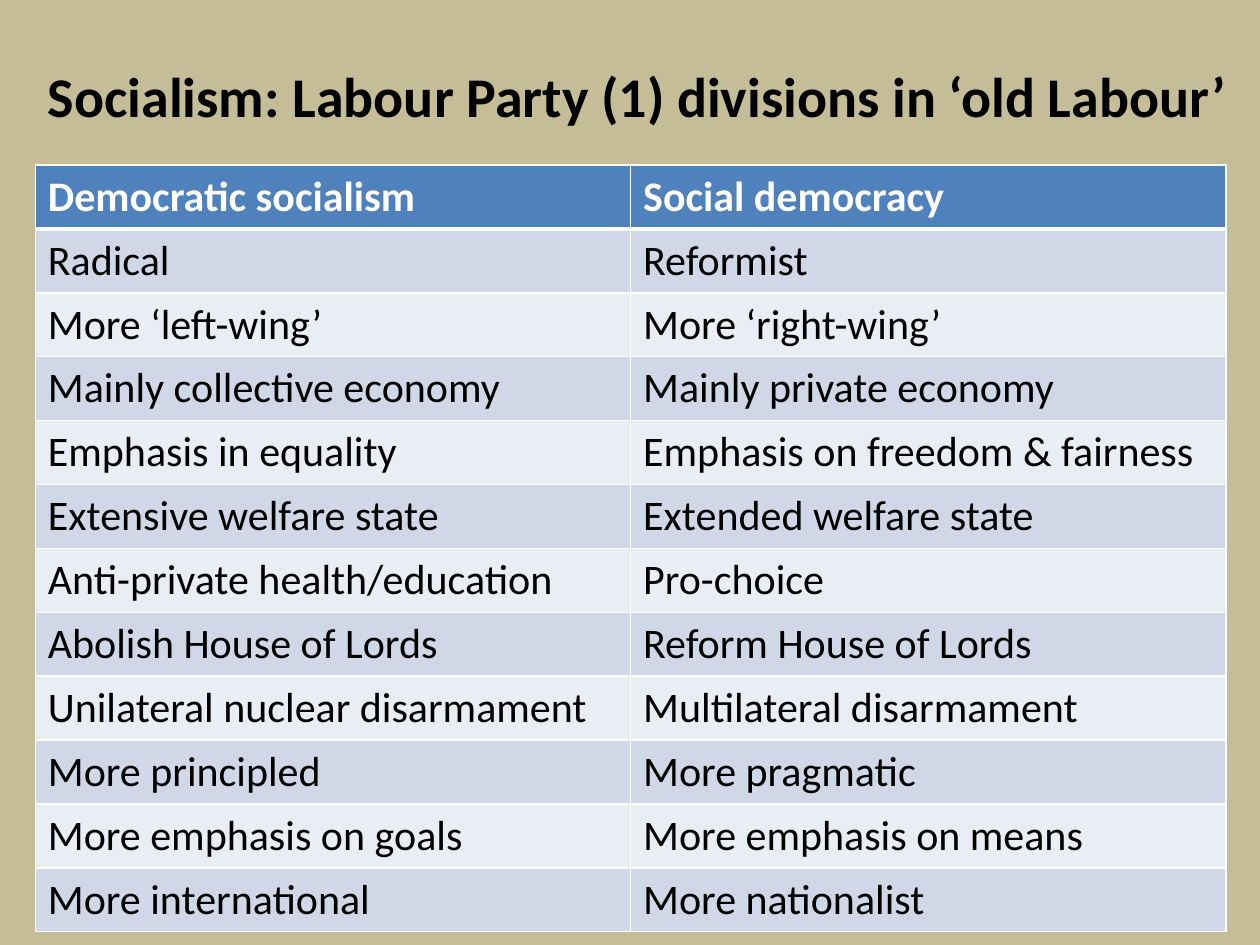
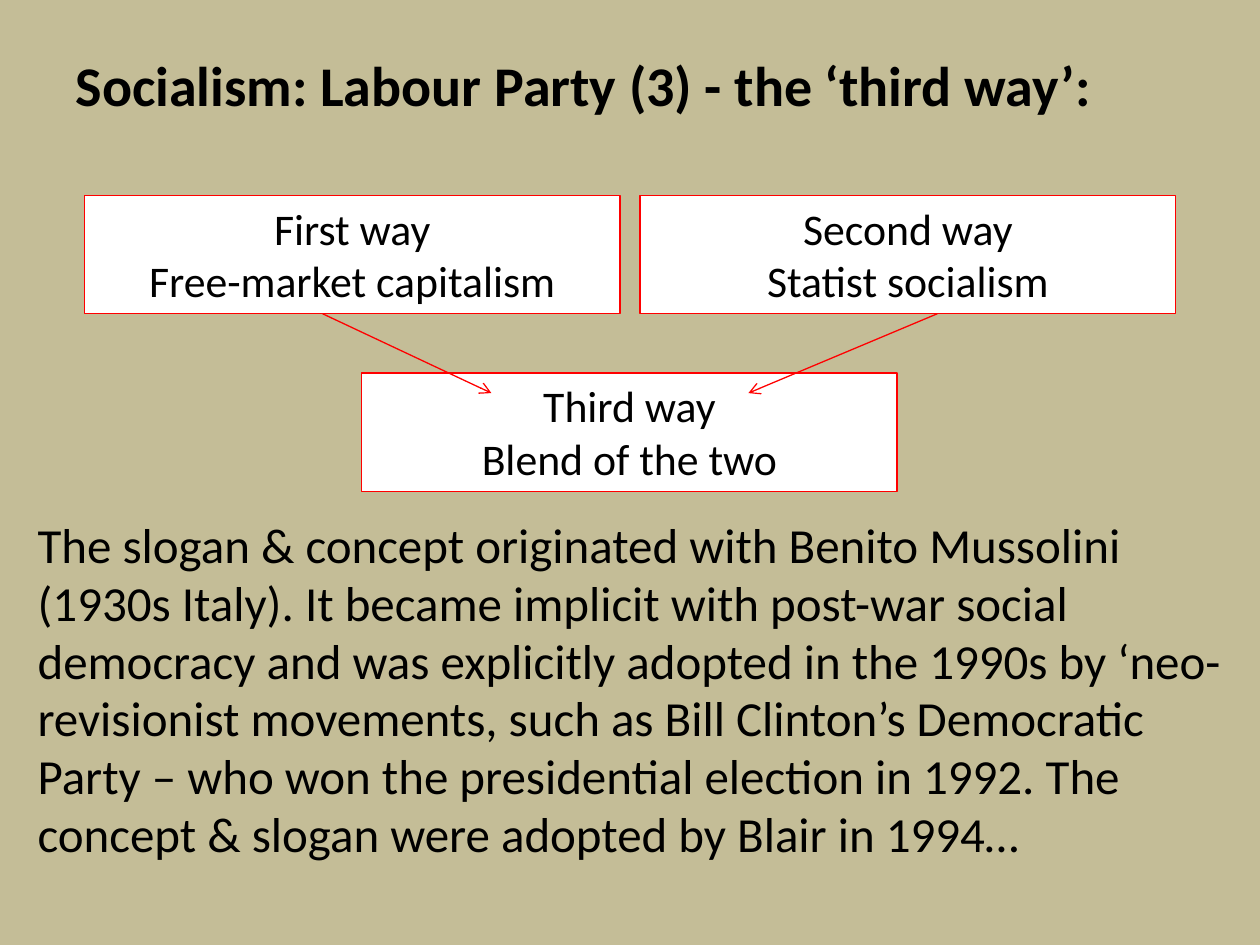
import pptx
import pptx.dml.color
import pptx.enum.shapes
import pptx.enum.text
import pptx.oxml
import pptx.oxml.ns
import pptx.util
from pptx.util import Inches

ALIGN = pptx.enum.text.PP_ALIGN
ANCHOR = pptx.enum.text.MSO_ANCHOR
BLACK, WHITE, RED = "000000", "FFFFFF", "FF0000"
BACKGROUND, HEADER, BANDS = "C4BD97", "4F81BD", ("D0D8E8", "E9EDF4")

SOCIALISM_ROWS = [
    ("Democratic socialism", "Social democracy"),
    ("Radical", "Reformist"),
    ("More ‘left-wing’", "More ‘right-wing’"),
    ("Mainly collective economy", "Mainly private economy"),
    ("Emphasis in equality", "Emphasis on freedom & fairness"),
    ("Extensive welfare state", "Extended welfare state"),
    ("Anti-private health/education", "Pro-choice"),
    ("Abolish House of Lords", "Reform House of Lords"),
    ("Unilateral nuclear disarmament", "Multilateral disarmament"),
    ("More principled", "More pragmatic"),
    ("More emphasis on goals", "More emphasis on means"),
    ("More international", "More nationalist"),
]

THIRD_WAY_TEXT = (
    "The slogan & concept originated with Benito Mussolini (1930s Italy). "
    "It became implicit with post-war social democracy and was explicitly "
    "adopted in the 1990s by ‘neo-revisionist movements, such as Bill "
    "Clinton’s Democratic Party – who won the presidential election in 1992. "
    "The concept & slogan were adopted by Blair in 1994…"
)


def rgb(value):
    return pptx.dml.color.RGBColor.from_string(value)


def write(tf, text, size=24, color=BLACK, bold=False, align=ALIGN.LEFT,
          anchor=ANCHOR.TOP, spacing=None):
    tf.word_wrap = True
    tf.vertical_anchor = anchor
    for i, line in enumerate(text.split("\n")):
        p = tf.add_paragraph() if i else tf.paragraphs[0]
        p.alignment = align
        p.line_spacing = spacing
        r = p.add_run()
        r.text = line
        r.font.name = "Calibri"
        r.font.size = pptx.util.Pt(size)
        r.font.bold = bold
        r.font.color.rgb = rgb(color)


def set_borders(cell, top, bottom):
    tc_pr = cell._tc.get_or_add_tcPr()
    for i, (side, width) in enumerate(
            (("L", 1), ("R", 1), ("T", top), ("B", bottom))):
        tc_pr.insert(i, pptx.oxml.parse_xml(
            f'<a:ln{side} {pptx.oxml.ns.nsdecls("a")} w="{pptx.util.Pt(width)}">'
            f'<a:solidFill><a:srgbClr val="{WHITE}"/></a:solidFill></a:ln{side}>'))


class Deck:
    """Holds the shared style and the slide being built."""

    def __init__(self):
        self.prs = pptx.Presentation()
        self.prs.slide_width, self.prs.slide_height = Inches(10), Inches(7.5)
        fill = self.prs.slide_master.background.fill
        fill.solid()
        fill.fore_color.rgb = rgb(BACKGROUND)
        self.s = None

    def slide(self, title, x, y, w, h):
        self.s = self.prs.slides.add_slide(self.prs.slide_layouts[5])
        sp = self.s.shapes.title
        sp.left, sp.top, sp.width, sp.height = map(Inches, (x, y, w, h))
        sp.text_frame.auto_size = pptx.enum.text.MSO_AUTO_SIZE.NONE
        write(sp.text_frame, title, size=32, bold=True, anchor=ANCHOR.MIDDLE)

    def table(self, rows, x, y, w, h):
        table = self.s.shapes.add_table(
            len(rows), len(rows[0]), *map(Inches, (x, y, w, h))).table
        for i, row in enumerate(rows):
            header = i == 0
            for j, text in enumerate(row):
                cell = table.cell(i, j)
                cell.fill.solid()
                cell.fill.fore_color.rgb = rgb(HEADER if header else BANDS[(i - 1) % 2])
                set_borders(cell, 3 if i == 1 else 1, 3 if header else 1)
                write(cell.text_frame, text, bold=header,
                      color=WHITE if header else BLACK)

    def text(self, text, x, y, w, h, **fmt):
        sp = self.s.shapes.add_textbox(*map(Inches, (x, y, w, h)))
        write(sp.text_frame, text, **fmt)

    def box(self, text, x, y, w=4.25, h=0.94):
        sp = self.s.shapes.add_shape(
            pptx.enum.shapes.MSO_SHAPE.RECTANGLE, *map(Inches, (x, y, w, h)))
        sp.shadow.inherit = False
        sp.fill.solid()
        sp.fill.fore_color.rgb = rgb(WHITE)
        sp.line.color.rgb = rgb(RED)
        sp.line.width = pptx.util.Pt(0.75)
        write(sp.text_frame, text, size=25, align=ALIGN.CENTER)

    def arrow(self, x1, y1, x2, y2):
        sp = self.s.shapes.add_connector(
            pptx.enum.shapes.MSO_CONNECTOR.STRAIGHT, *map(Inches, (x1, y1, x2, y2)))
        sp.line.color.rgb = rgb(RED)
        sp.line.width = pptx.util.Pt(0.75)
        ns = pptx.oxml.ns.nsdecls("a")
        sp.line._get_or_add_ln().append(
            pptx.oxml.parse_xml(f'<a:tailEnd {ns} type="arrow"/>'))
        sp._element.spPr.append(pptx.oxml.parse_xml(f"<a:effectLst {ns}/>"))


def main():
    deck = Deck()

    deck.slide("Socialism: Labour Party (1) divisions in ‘old Labour’",
               0.28, 0.13, 9.72, 1.25)
    deck.table(SOCIALISM_ROWS, 0.28, 1.31, 9.45, 6.08)

    deck.slide("Socialism: Labour Party (3) - the ‘third way’:", 0.5, 0.3, 9, 0.74)
    deck.text(THIRD_WAY_TEXT, 0.2, 4.06, 9.61, 2.9, size=28, spacing=0.98)
    deck.box("First way\nFree-market capitalism", 0.67, 1.55)
    deck.box("Second way\nStatist socialism", 5.08, 1.55)
    deck.box("Third way\nBlend of the two", 2.87, 2.96)
    for start, end in ((2.56, 3.9), (7.44, 5.94)):
        deck.arrow(start, 2.49, end, 3.12)

    deck.prs.save("out.pptx")


if __name__ == "__main__":
    main()
